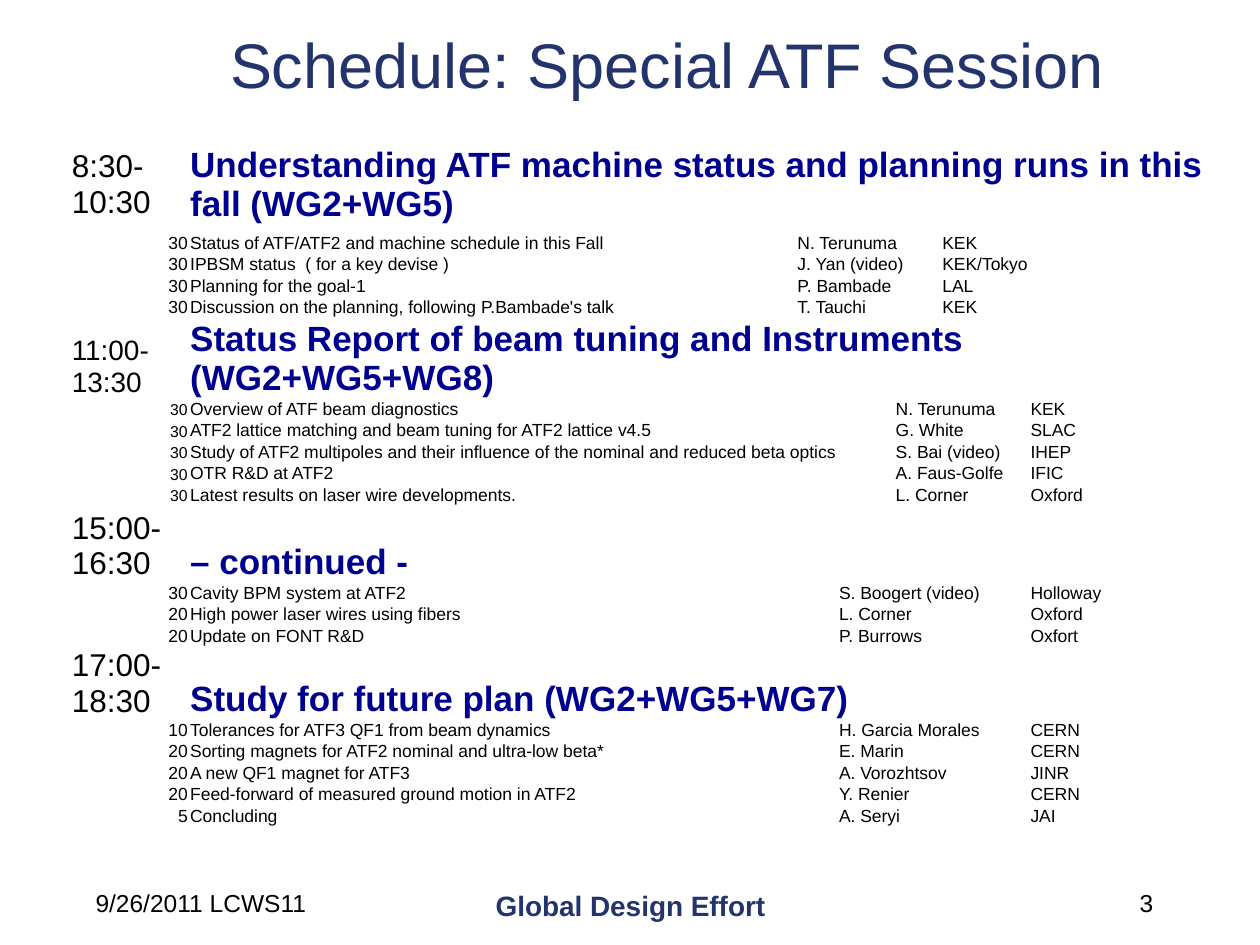
from dataclasses import dataclass

from pptx import Presentation
from pptx.dml.color import RGBColor
from pptx.enum.text import MSO_ANCHOR as Anchor, MSO_AUTO_SIZE as AutoSize, PP_ALIGN as Align
from pptx.oxml.ns import qn
from pptx.util import Inches, Pt


@dataclass(frozen=True)
class Theme:
    font: str = "Arial"
    navy: str = "23346C"
    blue: str = "000090"
    black: str = "000000"
    title: int = 36
    session: int = 20
    footer: int = 16
    margin_note: int = 14
    talk: int = 10


@dataclass(frozen=True)
class Session:
    times: tuple
    heading: str
    height: float
    starts: tuple
    talks: tuple
    anchor: Anchor = Anchor.BOTTOM
    time_size: int = 18
    minutes_size: int = 10


THEME = Theme()
COLUMNS = (0.94, 4.82, 0.33, 0.45, 0.37, 0.7, 1.44)
TALK_HEIGHT = 0.17
PLAIN_TABLE_STYLE = "{2D5ABB26-0587-4C30-8999-92F81FD0307C}"

SESSIONS = (
    Session(
        ("8:30-", "10:30"),
        "Understanding ATF machine status and planning runs in this fall (WG2+WG5)",
        0.76, (1, 2, 5),
        (
            ("30", "Status of ATF/ATF2 and machine schedule in this Fall", "N. Terunuma", "KEK"),
            ("30", "IPBSM status  ( for a key devise )", "J. Yan (video)", "KEK/Tokyo"),
            ("30", "Planning for the goal-1", "P. Bambade", "LAL"),
            ("30", "Discussion on the planning, following P.Bambade's talk", "T. Tauchi", "KEK"),
        ),
        anchor=Anchor.MIDDLE,
    ),
    Session(
        ("11:00-", "13:30"),
        "Status Report of beam tuning and Instruments (WG2+WG5+WG8)",
        0.64, (1, 4, 6),
        (
            ("30", "Overview of ATF beam diagnostics", "N. Terunuma", "KEK"),
            ("30", "ATF2 lattice matching and beam tuning for ATF2 lattice v4.5", "G. White", "SLAC"),
            ("30", "Study of ATF2 multipoles and their influence of the nominal and reduced beta optics",
             "S. Bai (video)", "IHEP"),
            ("30", "OTR R&D at ATF2", "A. Faus-Golfe", "IFIC"),
            ("30", "Latest results on laser wire developments.", "L. Corner", "Oxford"),
        ),
        time_size=16, minutes_size=9,
    ),
    Session(
        ("15:00-", "16:30"), "– continued -", 0.61, (1, 3, 6),
        (
            ("30", "Cavity BPM system at ATF2", "S. Boogert (video)", "Holloway"),
            ("20", "High power laser wires using fibers", "L. Corner", "Oxford"),
            ("20", "Update on FONT R&D", "P. Burrows", "Oxfort"),
        ),
    ),
    Session(
        ("17:00-", "18:30"), "Study for future plan (WG2+WG5+WG7)", 0.58, (1, 3, 6),
        (
            ("10", "Tolerances for ATF3 QF1 from beam dynamics", "H. Garcia Morales", "CERN"),
            ("20", "Sorting magnets for ATF2 nominal and ultra-low beta*", "E. Marin", "CERN"),
            ("20", "A new QF1 magnet for ATF3", "A. Vorozhtsov", "JINR"),
            ("20", "Feed-forward of measured ground motion in ATF2", "Y. Renier", "CERN"),
            ("5", "Concluding", "A. Seryi", "JAI"),
        ),
    ),
)


def write(frame, lines, size, color=THEME.black, bold=False, align=Align.LEFT):
    for index, line in enumerate(lines):
        paragraph = frame.add_paragraph() if index else frame.paragraphs[0]
        paragraph.alignment = align
        run = paragraph.add_run()
        run.text = line
        run.font.name = THEME.font
        run.font.size = Pt(size)
        run.font.bold = bold
        run.font.color.rgb = RGBColor.from_string(color)


def add_title(slide, text):
    title = slide.shapes.title
    title.left, title.top = Inches(1.42), Inches(0)
    title.width, title.height = Inches(7.75), Inches(1)
    frame = title.text_frame
    frame.auto_size = AutoSize.NONE
    frame.vertical_anchor = Anchor.MIDDLE
    write(frame, [text], THEME.title, THEME.navy, align=Align.CENTER)


def add_footer(slide, text, left, width, size, **style):
    box = slide.shapes.add_textbox(Inches(left), Inches(7), Inches(width), Inches(0.5))
    box.text_frame.word_wrap = True
    write(box.text_frame, [text], size, **style)


def fill_cell(cell, lines, size, anchor=Anchor.BOTTOM, **style):
    cell.vertical_anchor = anchor
    write(cell.text_frame, lines, size, **style)


def merge_span(table, row, start, end):
    cell = table.cell(row, start)
    if end - start > 1:
        cell.merge(table.cell(row, end - 1))
    return cell


def fill_session(table, row, session):
    table.rows[row].height = Inches(session.height)
    fill_cell(table.cell(row, 0), session.times, session.time_size, session.anchor)
    fill_cell(merge_span(table, row, 1, len(COLUMNS)), [session.heading],
              THEME.session, session.anchor, color=THEME.blue, bold=True)
    ends = session.starts[1:] + (len(COLUMNS),)
    for talk_row, (minutes, *details) in enumerate(session.talks, row + 1):
        table.rows[talk_row].height = Inches(TALK_HEIGHT)
        fill_cell(table.cell(talk_row, 0), [minutes], session.minutes_size, align=Align.RIGHT)
        for start, end, text in zip(session.starts, ends, details):
            fill_cell(merge_span(table, talk_row, start, end), [text], THEME.talk)


def add_schedule(slide):
    row_count = sum(1 + len(session.talks) for session in SESSIONS)
    graphic_frame = slide.shapes.add_table(row_count, len(COLUMNS), Inches(0.56), Inches(1.08),
                                           Inches(sum(COLUMNS)), Inches(5.5))
    table = graphic_frame.table
    next(graphic_frame.element.iter(qn("a:tableStyleId"))).text = PLAIN_TABLE_STYLE
    table.first_row = table.horz_banding = False
    for column, width in zip(table.columns, COLUMNS):
        column.width = Inches(width)
    for cell in table.iter_cells():
        cell.fill.background()
        cell.margin_left = cell.margin_right = cell.margin_top = Inches(0.01)
        cell.margin_bottom = Inches(0)
    row = 0
    for session in SESSIONS:
        fill_session(table, row, session)
        row += 1 + len(session.talks)


def main():
    presentation = Presentation()
    presentation.slide_width, presentation.slide_height = Inches(10), Inches(7.5)
    slide = presentation.slides.add_slide(presentation.slide_layouts[5])
    add_title(slide, "Schedule: Special ATF Session")
    add_schedule(slide)
    add_footer(slide, "9/26/2011 LCWS11", 0.66, 2.08, THEME.margin_note)
    add_footer(slide, "Global Design Effort", 3.42, 3.17, THEME.footer,
               color=THEME.navy, bold=True, align=Align.CENTER)
    add_footer(slide, "3", 7.17, 2.08, THEME.margin_note, align=Align.RIGHT)
    presentation.save("out.pptx")


if __name__ == "__main__":
    main()
